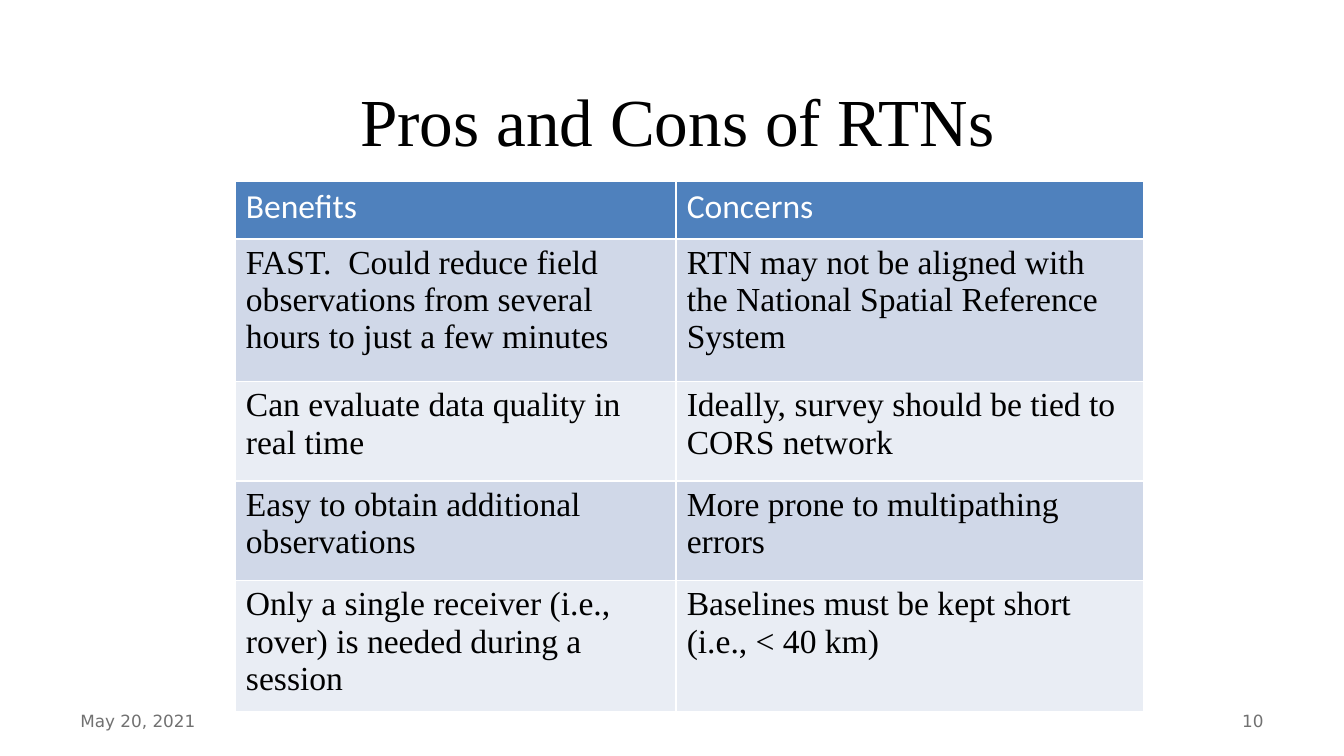
import pptx
import pptx.dml.color
import pptx.enum.text
import pptx.oxml
import pptx.oxml.ns
import pptx.util
from dataclasses import dataclass
from pptx.util import Inches

ALIGN = pptx.enum.text.PP_ALIGN
ANCHOR = pptx.enum.text.MSO_ANCHOR


@dataclass(frozen=True)
class Theme:
    ink: str = "000000"
    white: str = "FFFFFF"
    muted: str = "717171"
    header: str = "4F81BD"
    bands: tuple = ("D0D8E8", "E9EDF4")
    serif: str = "Times New Roman"
    sans: str = "Calibri"
    footer_font: str = "DejaVu Sans"
    title_size: int = 36
    body_size: int = 18
    footer_size: int = 9
    border: int = 1


THEME = Theme()

ROWS = [
    ("Benefits", "Concerns"),
    ("FAST.  Could reduce field observations from several hours to just a few minutes",
     "RTN may not be aligned with the National Spatial Reference System"),
    ("Can evaluate data quality in real time",
     "Ideally, survey should be tied to CORS network"),
    ("Easy to obtain additional observations",
     "More prone to multipathing errors"),
    ("Only a single receiver (i.e., rover) is needed during a session",
     "Baselines must be kept short (i.e., < 40 km)"),
]
COL_WIDTHS = (3.28, 3.48)
ROW_HEIGHTS = (0.43, 1.06, 0.74, 0.74, 0.94)


def rgb(color):
    return pptx.dml.color.RGBColor.from_string(color)


def write(tf, text, font=THEME.serif, size=THEME.body_size, color=THEME.ink,
          align=ALIGN.LEFT):
    tf.word_wrap = True
    p = tf.paragraphs[0]
    p.alignment = align
    r = p.add_run()
    r.text = text
    r.font.name = font
    r.font.size = pptx.util.Pt(size)
    r.font.color.rgb = rgb(color)


def add_text(s, box, text, **fmt):
    sp = s.shapes.add_textbox(*map(Inches, box))
    sp.text_frame.vertical_anchor = ANCHOR.MIDDLE
    write(sp.text_frame, text, **fmt)


def set_borders(cell):
    tc_pr = cell._tc.get_or_add_tcPr()
    width = pptx.util.Pt(THEME.border)
    # Border lines come before the fill in the cell properties
    for i, side in enumerate("LRTB"):
        tc_pr.insert(i, pptx.oxml.parse_xml(
            f'<a:ln{side} {pptx.oxml.ns.nsdecls("a")} w="{width}"><a:solidFill>'
            f'<a:srgbClr val="{THEME.white}"/></a:solidFill></a:ln{side}>'))


def add_comparison(s, box):
    table = s.shapes.add_table(len(ROWS), len(COL_WIDTHS), *map(Inches, box)).table
    for col, width in zip(table.columns, COL_WIDTHS):
        col.width = Inches(width)
    for row, height in zip(table.rows, ROW_HEIGHTS):
        row.height = Inches(height)
    for i, texts in enumerate(ROWS):
        if i == 0:
            fill, fmt = THEME.header, dict(font=THEME.sans, color=THEME.white)
        else:
            fill, fmt = THEME.bands[(i - 1) % 2], {}
        for j, text in enumerate(texts):
            cell = table.cell(i, j)
            cell.margin_left = cell.margin_right = Inches(0.08)
            cell.margin_top = cell.margin_bottom = Inches(0.04)
            cell.fill.solid()
            cell.fill.fore_color.rgb = rgb(fill)
            set_borders(cell)
            write(cell.text_frame, text, **fmt)


def add_footer(s, box, date, number):
    left, top, width, height = box
    part = 2.33
    fmt = dict(font=THEME.footer_font, size=THEME.footer_size, color=THEME.muted)
    add_text(s, (left, top, part, height), date, **fmt)
    add_text(s, (left + width - part, top, part, height), number,
             align=ALIGN.RIGHT, **fmt)


def add_title(s, box, text):
    add_text(s, box, text, size=THEME.title_size, align=ALIGN.CENTER)


def main():
    prs = pptx.Presentation()
    # Widescreen, 16:9
    prs.slide_width = Inches(10)
    prs.slide_height = Inches(10 * 9 / 16)
    s = prs.slides.add_slide(prs.slide_layouts[6])

    # Footer: date and slide number
    add_footer(s, (0.5, 5.21, 9, 0.3), "May 20, 2021", "10")
    # Title
    add_title(s, (1.25, 0.38, 7.58, 1.02), "Pros and Cons of RTNs")
    # Benefits and concerns
    add_comparison(s, (1.75, 1.35, sum(COL_WIDTHS), sum(ROW_HEIGHTS)))

    prs.save("out.pptx")


if __name__ == "__main__":
    main()
